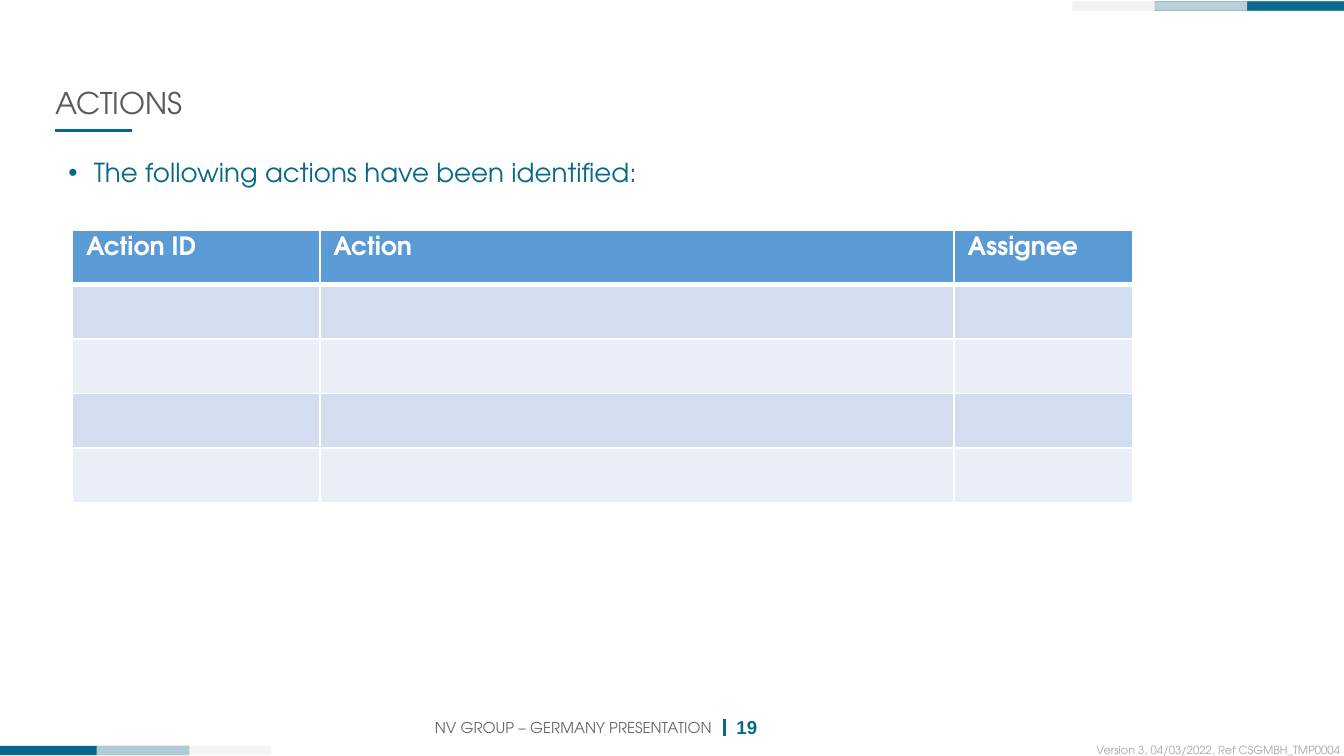
from lxml.etree import SubElement
from pptx import Presentation
from pptx.dml.color import RGBColor
from pptx.enum.shapes import MSO_CONNECTOR, MSO_SHAPE
from pptx.enum.text import MSO_ANCHOR, PP_ALIGN
from pptx.oxml.ns import qn
from pptx.util import Inches, Pt

TEAL = RGBColor(0x07, 0x68, 0x89)
BAR_TEAL = RGBColor(0x04, 0x66, 0x8A)
BAR_GREY = RGBColor(0xF2, 0xF2, 0xF2)
TITLE_GREY = RGBColor(0x59, 0x59, 0x59)
FOOTER_GREY = RGBColor(0x66, 0x66, 0x66)
VERSION_GREY = RGBColor(0xA6, 0xA6, 0xA6)
WHITE = RGBColor(0xFF, 0xFF, 0xFF)
HEADER_BLUE = RGBColor(0x5B, 0x9B, 0xD5)
BANDS = [RGBColor(0xEA, 0xEF, 0xF7), RGBColor(0xD2, 0xDE, 0xEF)]
FONT = "TeX Gyre Adventor"

# A 16:9 slide
prs = Presentation()
prs.slide_width, prs.slide_height = Inches(10), Inches(10 * 9 / 16)
s = prs.slides.add_slide(prs.slide_layouts[5])


def add_run(p, text, size, color, font=FONT, bold=False):
    r = p.add_run()
    r.text = text
    r.font.name, r.font.size, r.font.bold = font, Pt(size), bold
    r.font.color.rgb = color


def add_box(left, top, width, height, insets, wrap=False):
    tf = s.shapes.add_textbox(Inches(left), Inches(top), Inches(width), Inches(height)).text_frame
    tf.word_wrap = wrap
    tf.margin_left, tf.margin_top, tf.margin_right, tf.margin_bottom = map(Inches, insets)
    return tf.paragraphs[0]


# Corner bars: translucent grey overlaps teal, giving the pale middle step
TOP, BOTTOM = 0.01, 5.55
top_pair = [(8.59, TOP, 1.41, BAR_TEAL, 83), (7.98, TOP, 1.3, BAR_GREY, 72)]
bottom_pair = [(0, BOTTOM, 1.41, BAR_TEAL, 100), (0.72, BOTTOM, 1.3, BAR_GREY, 72)]
for left, top, width, color, opacity in top_pair * 2 + bottom_pair:
    sp = s.shapes.add_shape(MSO_SHAPE.RECTANGLE, Inches(left), Inches(top), Inches(width), Inches(0.07))
    sp.shadow.inherit = False
    sp.fill.solid()
    sp.fill.fore_color.rgb = color
    sp.line.fill.background()
    clr = sp.fill._xPr.find(".//" + qn("a:srgbClr"))
    SubElement(clr, qn("a:alpha"), val=str(opacity * 1000))

# Title underline and footer divider
for x1, y1, x2, y2 in [(0.98, 0.97, 0.41, 0.97), (5.39, 5.35, 5.39, 5.48)]:
    line = s.shapes.add_connector(MSO_CONNECTOR.STRAIGHT, Inches(x1), Inches(y1), Inches(x2), Inches(y2))
    line.line.color.rgb = TEAL
    line.line.width = Pt(1.5)
    SubElement(line._element.spPr, qn("a:effectLst"))

# Footer
p = add_box(3.11, 5.31, 2.28, 0.25, (0.09, 0.05, 0.09, 0.04))
p.alignment, p.line_spacing = PP_ALIGN.RIGHT, 0.93
add_run(p, "NV GROUP – GERMANY PRESENTATION", 8, FOOTER_GREY)
p = add_box(5.35, 5.27, 0.46, 0.28, (0.13, 0.07, 0.09, 0.04))
p.line_spacing = 0.93
add_run(p, "19", 10, TEAL, "Arial", True)
p = add_box(8.06, 5.48, 1.94, 0.14, (0.1, 0.06, 0, 0))
p.line_spacing = 0.93
add_run(p, "Version 3, 04/03/2022, Ref CSGMBH_TMP0004", 6, VERSION_GREY)

# Title
title = s.shapes.title
title.left, title.top, title.width, title.height = map(Inches, (0.41, 0.24, 8.69, 0.71))
tf = title.text_frame
tf.word_wrap, tf.vertical_anchor = True, MSO_ANCHOR.BOTTOM
tf.margin_left, tf.margin_top, tf.margin_right, tf.margin_bottom = map(Inches, (0, 0.05, 0.1, 0.05))
p = tf.paragraphs[0]
p.alignment, p.line_spacing = PP_ALIGN.LEFT, 0.9
add_run(p, "ACTIONS", 16, TITLE_GREY)

# Bulleted introduction
p = add_box(0.41, 1.14, 8.69, 3.83, (0.1, 0.05, 0.1, 0.05), wrap=True)
p.line_spacing = 0.9
pPr = p._p.get_or_add_pPr()
pPr.set("marL", str(Inches(0.19)))
pPr.set("indent", str(Inches(-0.19)))
SubElement(pPr, qn("a:buFont"), typeface="Arial")
SubElement(pPr, qn("a:buChar"), char="•")
add_run(p, "The following actions have been identified:", 14, TEAL)

# Actions table
HEADERS = ["Action ID", "Action", "Assignee"]
ROWS = 5
table = s.shapes.add_table(ROWS, len(HEADERS), Inches(0.54), Inches(1.71),
                           Inches(7.89), Inches(2.03)).table
for column, width in zip(table.columns, (1.84, 4.72, 1.33)):
    column.width = Inches(width)
for i in range(ROWS):
    for j, header in enumerate(HEADERS):
        cell = table.cell(i, j)
        tcPr = cell._tc.get_or_add_tcPr()
        for side in ("lnL", "lnR", "lnT", "lnB"):
            # The rule under the header row is heavier
            heavy = (i, side) in [(0, "lnB"), (1, "lnT")]
            ln = SubElement(tcPr, qn("a:" + side), w=str(Pt(3 if heavy else 1)))
            SubElement(SubElement(ln, qn("a:solidFill")), qn("a:srgbClr"), val=str(WHITE))
        cell.fill.solid()
        cell.fill.fore_color.rgb = BANDS[i % 2] if i else HEADER_BLUE
        if i == 0:
            add_run(cell.text_frame.paragraphs[0], header, 13.5, WHITE, bold=True)

prs.save("out.pptx")
